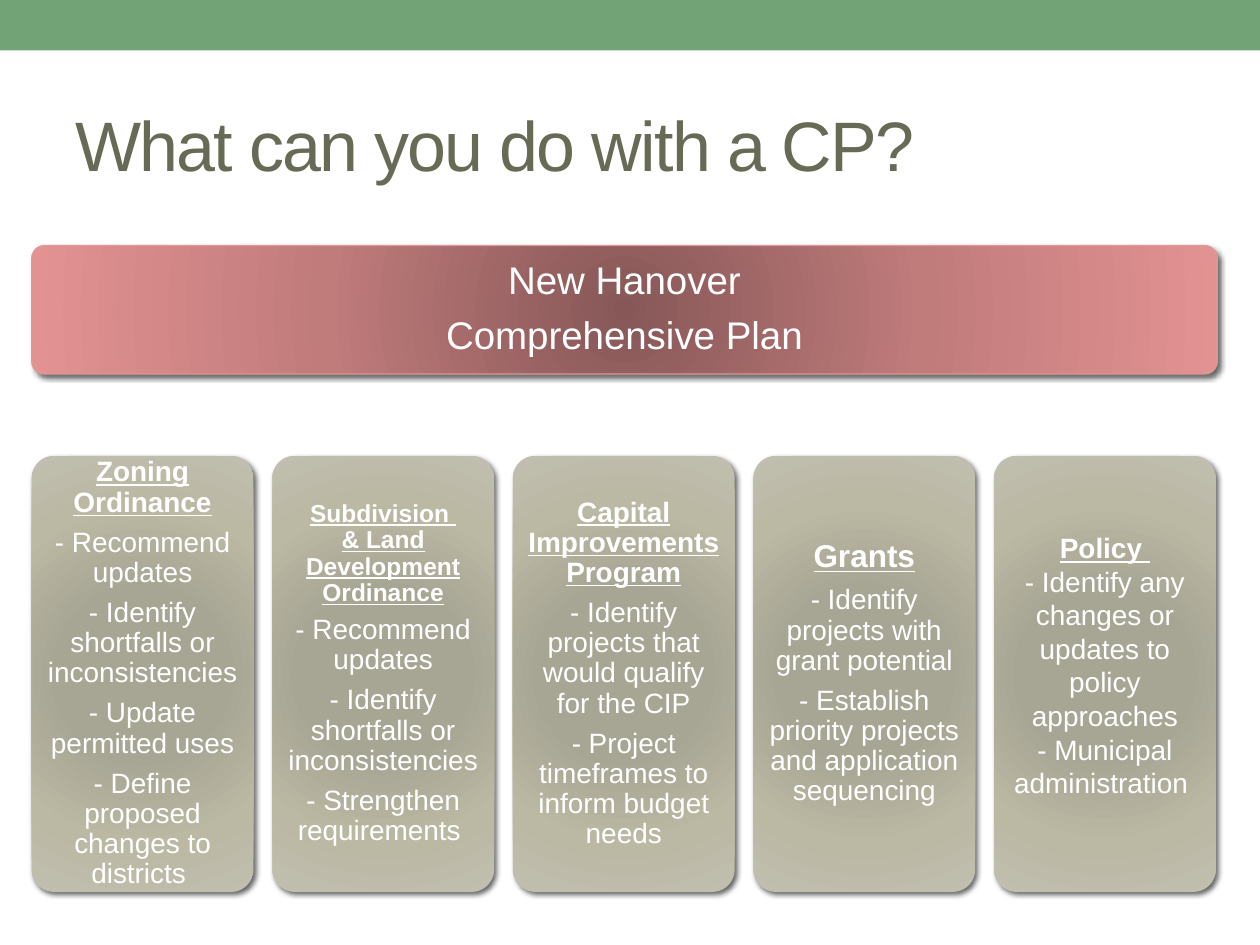
from copy import deepcopy
from dataclasses import dataclass

from pptx import Presentation
from pptx.dml.color import RGBColor
from pptx.enum.shapes import MSO_SHAPE as Preset
from pptx.enum.text import MSO_ANCHOR as Anchor, PP_ALIGN as Align
from pptx.oxml import parse_xml
from pptx.oxml.ns import nsdecls, qn
from pptx.util import Cm, Pt

WHITE = "FFFFFF"
GREEN = "72A376"
OLIVE = "676A55"
ROSE = "DE9898"
FONT = "Arial"


@dataclass(frozen=True)
class Glow:
    stops: tuple[tuple[int, str], ...]
    focus: int


@dataclass(frozen=True)
class Use:
    heading: str
    actions: tuple[str, ...]
    heading_size: int = 16
    inset: float = 0.18
    bottom_inset: float = 0.18
    line_spacing: float = 0.9
    gap_ratio: float = 0.35


PLAN_GLOW = Glow(((0, "875757"), (50, "C07B7B"), (100, "E39292")), 50)
USE_GLOW = Glow(((0, "A8A592"), (34, "A7A593"), (70, "BBB8A4"), (100, "C0BEAF")), 100)

USES = (
    Use("Zoning Ordinance", (
        "- Recommend updates",
        "- Identify shortfalls or inconsistencies",
        "- Update permitted uses",
        "- Define proposed changes to districts ",
    )),
    Use("Subdivision \v& Land Development Ordinance", (
        "- Recommend updates",
        "- Identify shortfalls or inconsistencies",
        "- Strengthen requirements ",
    ), heading_size=14, inset=0.15, bottom_inset=0.15),
    Use("Capital Improvements Program", (
        "- Identify projects that would qualify for the CIP",
        "- Project timeframes to inform budget needs",
    )),
    Use("Grants", (
        "- Identify projects with grant potential",
        "- Establish priority projects and application sequencing",
    ), heading_size=18),
    Use("Policy ", (
        "- Identify any changes or updates to policy approaches",
        "- Municipal administration ",
    ), bottom_inset=0.54, line_spacing=1.0, gap_ratio=0),
)


def color(value: str) -> RGBColor:
    return RGBColor.from_string(value)


def frame_text(shape, inset: float, bottom: float):
    frame = shape.text_frame
    frame.word_wrap = True
    frame.vertical_anchor = Anchor.MIDDLE
    frame.margin_left = frame.margin_right = frame.margin_top = Cm(inset)
    frame.margin_bottom = Cm(bottom)
    return frame


def write(frame, text: str, *, size: float, ink: str = WHITE, align=Align.CENTER,
          heading: bool = False, line_spacing: float = 0.9,
          gap_ratio: float = 0.35, tracking: int = 0) -> None:
    first = frame.paragraphs[0]
    paragraph = frame.add_paragraph() if first.runs else first
    paragraph.text = text
    paragraph.alignment = align
    paragraph.line_spacing = line_spacing
    paragraph.space_after = Pt(size * gap_ratio)
    for run in paragraph.runs:
        run.font.name = FONT
        run.font.size = Pt(size)
        run.font.bold = heading
        run.font.underline = heading
        run.font.color.rgb = color(ink)
        if tracking:
            run._r.get_or_add_rPr().set("spc", str(tracking))
    for line_break in paragraph._p.findall(qn("a:br")):
        line_break.append(deepcopy(paragraph.runs[0]._r.rPr))


def add_card(slide, left: float, top: float, width: float, height: float, glow: Glow):
    card = slide.shapes.add_shape(
        Preset.ROUNDED_RECTANGLE, Cm(left), Cm(top), Cm(width), Cm(height))
    card.adjustments[0] = 0.1
    card.fill.gradient()
    stops = "".join(
        f'<a:gs pos="{position * 1000}"><a:srgbClr val="{tone}"/></a:gs>'
        for position, tone in glow.stops)
    edge = glow.focus * 1000
    properties = card._element.spPr
    properties.replace(properties.find(qn("a:gradFill")), parse_xml(
        f'<a:gradFill {nsdecls("a")} rotWithShape="1"><a:gsLst>{stops}</a:gsLst>'
        f'<a:path path="circle"><a:fillToRect l="{edge}" t="{edge}" r="{edge}" b="{edge}"/>'
        '</a:path></a:gradFill>'))
    card.line.fill.background()
    card.shadow.inherit = False
    properties.find(qn("a:effectLst")).append(parse_xml(
        f'<a:outerShdw {nsdecls("a")} blurRad="{Pt(3)}" dist="{Pt(2)}" dir="2700000" '
        'rotWithShape="0"><a:srgbClr val="000000"><a:alpha val="60000"/></a:srgbClr>'
        '</a:outerShdw>'))
    return card


def add_use(slide, left: float, use: Use) -> None:
    card = add_card(slide, left, 9.19, 4.47, 8.79, USE_GLOW)
    frame = frame_text(card, use.inset, use.bottom_inset)
    spacing = {"line_spacing": use.line_spacing, "gap_ratio": use.gap_ratio}
    write(frame, use.heading, size=use.heading_size, heading=True, **spacing)
    for action in use.actions:
        write(frame, action, size=16, **spacing)


def main() -> None:
    deck = Presentation()
    deck.slide_width, deck.slide_height = Cm(25.4), Cm(19.05)
    slide = deck.slides.add_slide(deck.slide_layouts[6])

    top_band = slide.shapes.add_shape(Preset.RECTANGLE, 0, 0, deck.slide_width, Cm(1.02))
    top_band.fill.solid()
    top_band.fill.fore_color.rgb = color(GREEN)
    top_band.line.fill.background()
    top_band.shadow.inherit = False

    title = slide.shapes.add_textbox(Cm(1.27), Cm(1.47), Cm(22.86), Cm(2.74))
    write(frame_text(title, 0.25, 0.13), "What can you do with a CP?", size=40, ink=OLIVE,
          align=Align.LEFT, line_spacing=1.0, gap_ratio=0, tracking=-100)

    plan = add_card(slide, 0.64, 4.95, 23.9, 2.59, PLAN_GLOW)
    plan.line.color.rgb = color(ROSE)
    plan.line.width = Pt(0.75)
    plan_text = frame_text(plan, 0.23, 0.23)
    for line in ("New Hanover", "Comprehensive Plan"):
        write(plan_text, line, size=22)

    for index, use in enumerate(USES):
        add_use(slide, 0.64 + index * 4.85, use)

    deck.save("out.pptx")


if __name__ == "__main__":
    main()
